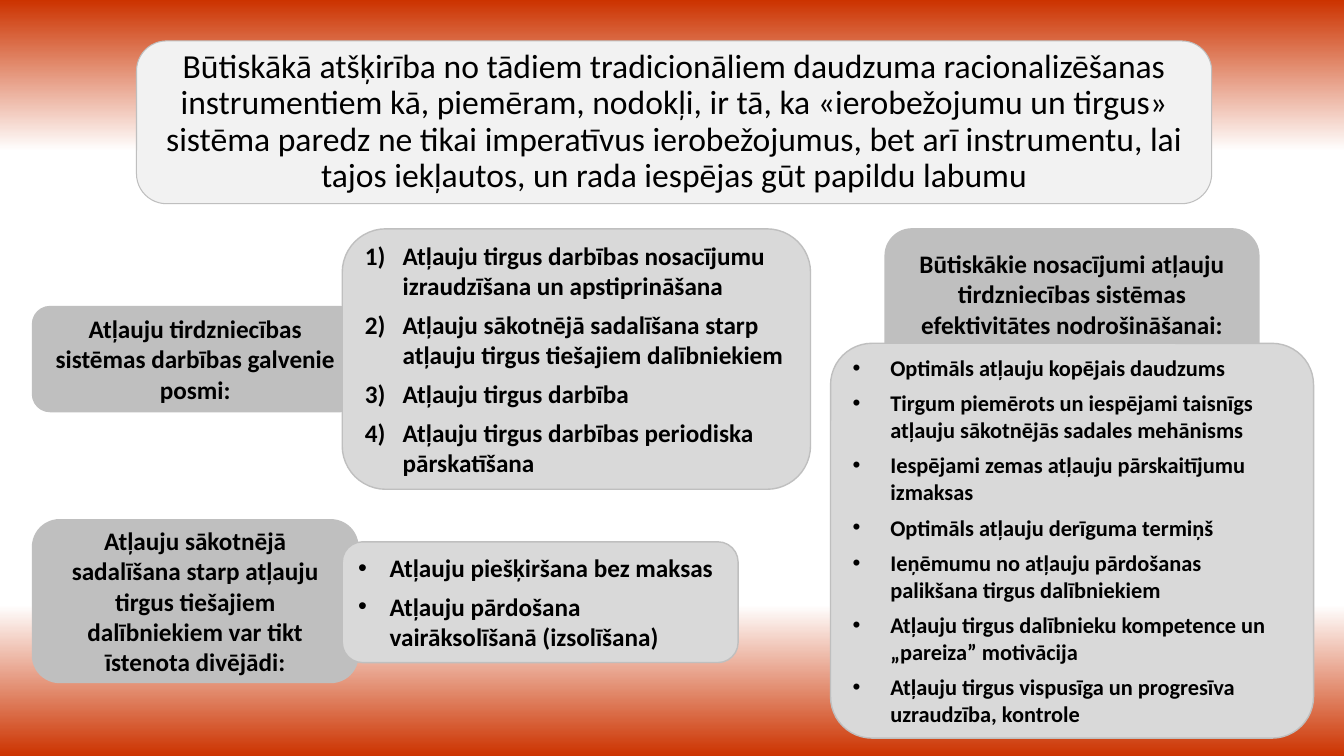
from dataclasses import dataclass

from lxml import etree
from pptx import Presentation
from pptx import util as u
from pptx.dml.color import RGBColor
from pptx.enum import shapes, text
from pptx.oxml import ns
from pptx.slide import Slide

PX = 9525
SLIDE_WIDTH, SLIDE_HEIGHT = 1280, 720
FONT = "Calibri"
RED = RGBColor(0xCC, 0x33, 0x00)
WHITE = RGBColor(0xFF, 0xFF, 0xFF)
BLACK = RGBColor(0x00, 0x00, 0x00)
PALE = RGBColor(0xF2, 0xF2, 0xF2)
LIGHT = RGBColor(0xD9, 0xD9, 0xD9)
GREY = RGBColor(0xBF, 0xBF, 0xBF)
BACKGROUND_STOPS = ((0, RED), (20, WHITE), (80, WHITE), (100, RED))


@dataclass(frozen=True)
class Box:
    left: int
    top: int
    width: int
    height: int
    fill: RGBColor
    paragraphs: tuple[str, ...]
    size: int = 18
    bold: bool = True
    line_width: float = 1
    corner: float = 0.167
    line_spacing: float = 1.0
    bottom_inset: int = 5
    marker: str = ""
    indent: int = 0


BOXES = (
    Box(31, 495, 310, 155, GREY, (
        "Atļauju sākotnējā sadalīšana starp atļauju tirgus tiešajiem "
        "dalībniekiem var tikt īstenota divējādi:",
    )),
    Box(130, 39, 1024, 155, PALE, (
        "Būtiskākā atšķirība no tādiem tradicionāliem daudzuma racionalizēšanas "
        "instrumentiem kā, piemēram, nodokļi, ir tā, ka «ierobežojumu un tirgus» "
        "sistēma paredz ne tikai imperatīvus ierobežojumus, bet arī instrumentu, "
        "lai tajos iekļautos, un rada iespējas gūt papildu labumu",
    ), size=24, bold=False, line_width=0.75, corner=0.184, line_spacing=0.9),
    Box(31, 292, 310, 100, GREY, (
        "Atļauju tirdzniecības sistēmas darbības galvenie posmi:",
    )),
    Box(326, 218, 446, 248, LIGHT, (
        "Atļauju tirgus darbības nosacījumu izraudzīšana un apstiprināšana",
        "Atļauju sākotnējā sadalīšana starp atļauju tirgus tiešajiem dalībniekiem",
        "Atļauju tirgus darbība",
        "Atļauju tirgus darbības periodiska pārskatīšana",
    ), marker="1)", indent=36),
    Box(326, 516, 377, 115, LIGHT, (
        "Atļauju piešķiršana bez maksas",
        "Atļauju pārdošana vairāksolīšanā (izsolīšana)",
    ), marker="•", indent=30),
    Box(843, 218, 356, 153, GREY, (
        "Būtiskākie nosacījumi atļauju tirdzniecības sistēmas "
        "efektivitātes nodrošināšanai:",
    ), bottom_inset=34),
    Box(791, 327, 460, 376, LIGHT, (
        "Optimāls atļauju kopējais daudzums",
        "Tirgum piemērots un iespējami taisnīgs atļauju sākotnējās sadales mehānisms",
        "Iespējami zemas atļauju pārskaitījumu izmaksas",
        "Optimāls atļauju derīguma termiņš",
        "Ieņēmumu no atļauju pārdošanas palikšana tirgus dalībniekiem",
        "Atļauju tirgus dalībnieku kompetence un „pareiza” motivācija",
        "Atļauju tirgus vispusīga un progresīva uzraudzība, kontrole",
    ), size=16, corner=0.105, marker="•", indent=36),
)


def px(length: int) -> u.Emu:
    return u.Emu(length * PX)


def paint_background(slide: Slide) -> None:
    fill = slide.background.fill
    fill.gradient()
    fill.gradient_angle = 270
    stops = next(slide.element.iter(ns.qn("a:gsLst")))
    for stop in list(stops):
        stops.remove(stop)
    for percent, color in BACKGROUND_STOPS:
        stop = etree.SubElement(stops, ns.qn("a:gs"), pos=str(percent * 1000))
        etree.SubElement(stop, ns.qn("a:srgbClr"), val=str(color))


def add_marker(properties: etree.ElementBase, marker: str, indent: int) -> None:
    properties.set("marL", str(px(indent)))
    properties.set("indent", str(-px(indent)))
    if marker == "•":
        etree.SubElement(properties, ns.qn("a:buFont"), typeface="Arial")
        etree.SubElement(properties, ns.qn("a:buChar"), char=marker)
    else:
        etree.SubElement(properties, ns.qn("a:buFont"), typeface="+mj-lt")
        etree.SubElement(properties, ns.qn("a:buAutoNum"), type="arabicParenR")


def draw_box(slide: Slide, box: Box) -> None:
    shape = slide.shapes.add_shape(
        shapes.MSO_SHAPE.ROUNDED_RECTANGLE,
        px(box.left), px(box.top), px(box.width), px(box.height),
    )
    shape.adjustments[0] = box.corner
    shape.shadow.inherit = False
    shape.fill.solid()
    shape.fill.fore_color.rgb = box.fill
    shape.line.color.rgb = GREY
    shape.line.width = u.Pt(box.line_width)
    frame = shape.text_frame
    frame.word_wrap = True
    frame.vertical_anchor = text.MSO_ANCHOR.MIDDLE
    frame.margin_bottom = px(box.bottom_inset)
    for index, content in enumerate(box.paragraphs):
        paragraph = frame.add_paragraph() if index else frame.paragraphs[0]
        paragraph.line_spacing = box.line_spacing
        if box.marker:
            paragraph.alignment = text.PP_ALIGN.LEFT
            paragraph.space_after = u.Pt(6)
            add_marker(paragraph._p.get_or_add_pPr(), box.marker, box.indent)
        else:
            paragraph.alignment = text.PP_ALIGN.CENTER
        run = paragraph.add_run()
        run.text = content
        run.font.name = FONT
        run.font.size = u.Pt(box.size)
        run.font.bold = box.bold
        run.font.color.rgb = BLACK


def main() -> None:
    presentation = Presentation()
    presentation.slide_width = px(SLIDE_WIDTH)
    presentation.slide_height = px(SLIDE_HEIGHT)
    slide = presentation.slides.add_slide(presentation.slide_layouts[6])
    paint_background(slide)
    for box in BOXES:
        draw_box(slide, box)
    presentation.save("out.pptx")


if __name__ == "__main__":
    main()
